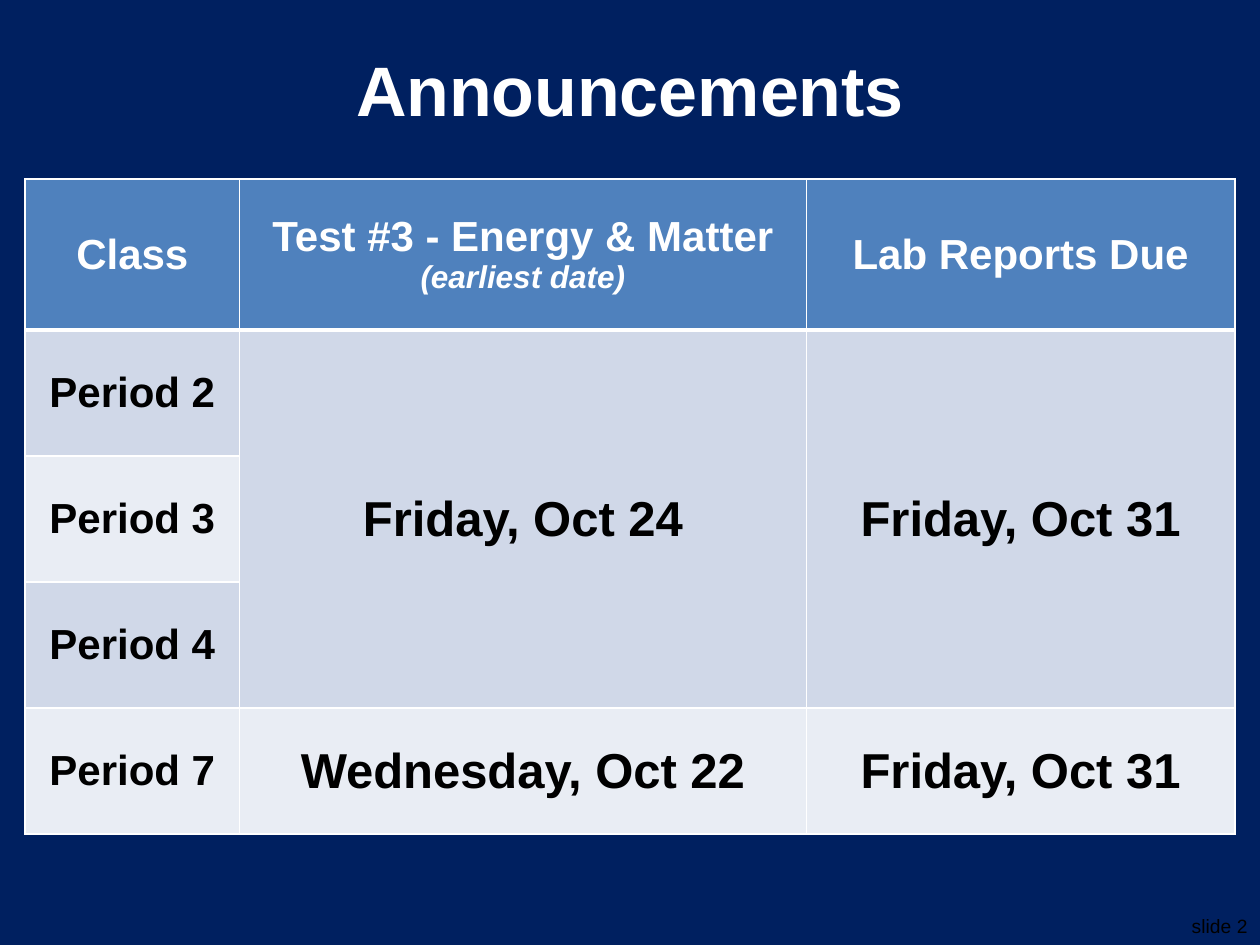
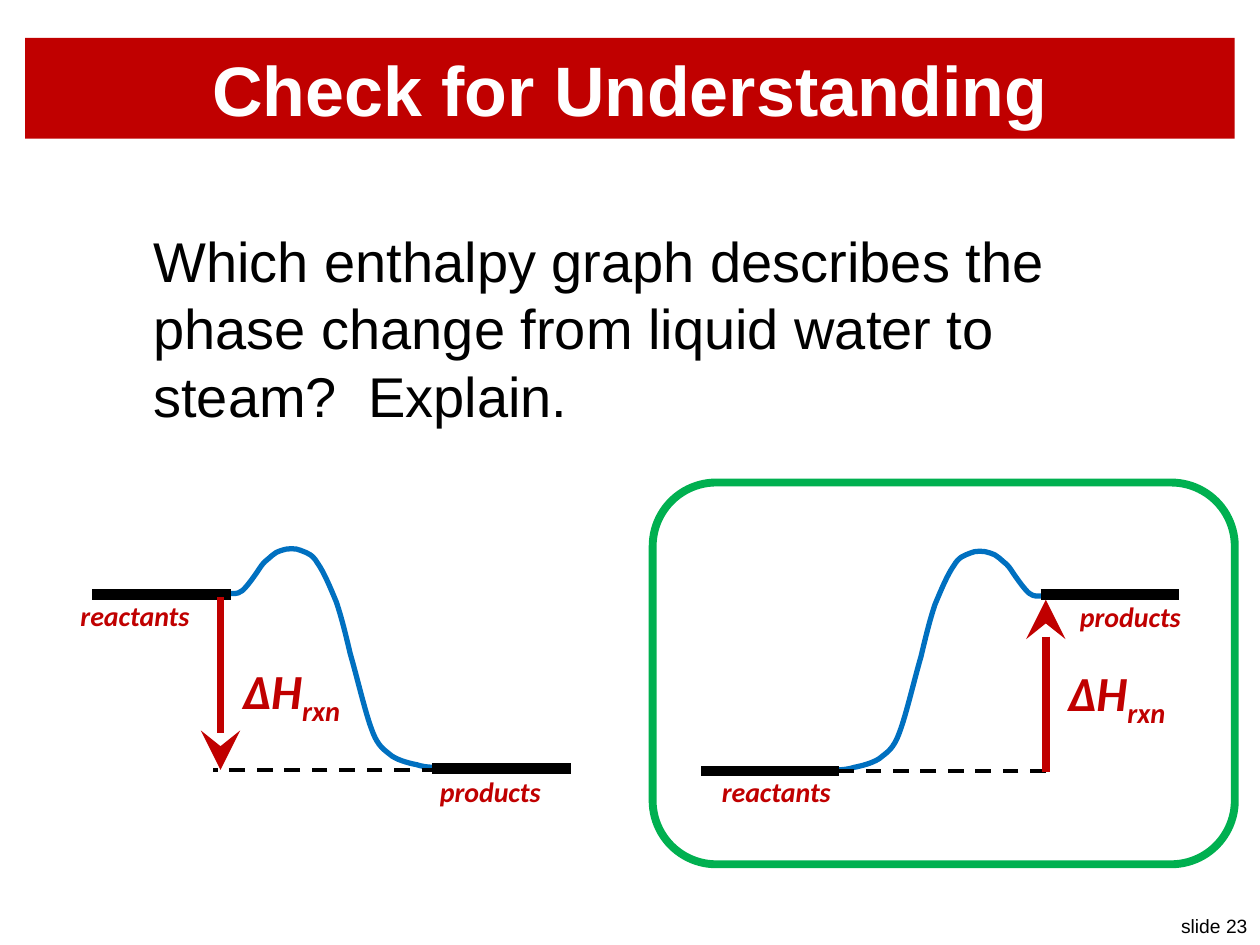
from lxml import etree
from pptx import Presentation
from pptx.dml.color import RGBColor
from pptx.enum.dml import MSO_LINE
from pptx.enum.shapes import MSO_CONNECTOR, MSO_SHAPE
from pptx.enum.text import MSO_ANCHOR, MSO_AUTO_SIZE, PP_ALIGN as AL
from pptx.oxml.ns import qn
from pptx.util import Inches, Pt

NAVY, WHITE, BLACK, RED = "002060", "FFFFFF", "000000", "C00000"
HEADER, BAND_DARK, BAND_LIGHT = "4F81BD", "D0D8E8", "E9EDF4"
CURVE_BLUE, ANSWER_GREEN = "0070C0", "00B050"

# Announcements: each cell is a list of (text, size, italic) lines
COLUMNS = [1.7, 4.5, 3.4]
ROWS = [1.2, 1, 1, 1, 1]
HEADINGS = [[("Class", 24, False)],
            [("Test #3 - Energy & Matter", 24, False), ("(earliest date)", 18, True)],
            [("Lab Reports Due", 24, False)]]
CLASSES = [("Period 2", "Friday, Oct 24", "Friday, Oct 31"),
           ("Period 3", None, None),
           ("Period 4", None, None),
           ("Period 7", "Wednesday, Oct 22", "Friday, Oct 31")]

# Check for Understanding
QUESTION = "Which enthalpy graph describes the phase change from liquid water to steam?  Explain."
# Energy curve from the high level to the low one: a start, then Bezier triples
CURVE = [(0, 0),
         (.03, 0), (.06, .01), (.1, -.02), (.13, -.04), (.2, -.14), (.2, -.14),
         (.23, -.18), (.25, -.22), (.28, -.25), (.32, -.28), (.36, -.33), (.41, -.34),
         (.46, -.36), (.53, -.36), (.57, -.34), (.62, -.32), (.66, -.31), (.7, -.24),
         (.75, -.17), (.8, -.05), (.85, .07), (.89, .19), (.92, .31), (.96, .48),
         (1.01, .65), (1.08, .95), (1.13, 1.08), (1.18, 1.22), (1.23, 1.24), (1.29, 1.29),
         (1.35, 1.33), (1.44, 1.35), (1.49, 1.36), (1.55, 1.38), (1.62, 1.38), (1.62, 1.38)]
GRAPHS = [
    dict(start=(8.27, 4.73), direction=-1, high_y=4.72, low_y=6.12,
         dash=(6.52, 8.3, 6.12), arrow=(8.3, 4.76, 6.13), head="headEnd",
         reactants=(5.63, 6.1), products=(8.45, 4.71), delta=(8.38, 5.21)),
    dict(start=(1.82, 4.71), direction=1, high_y=4.72, low_y=6.1,
         dash=(1.69, 3.47, 6.11), arrow=(1.75, 4.74, 6.11), head="tailEnd",
         reactants=(.54, 4.7), products=(3.37, 6.1), delta=(1.83, 5.19)),
]


def rgb(color):
    return RGBColor.from_string(color)


def add_run(p, text, size, color, font="Arial", bold=False, italic=False):
    r = p.add_run()
    r.text = text
    r.font.name, r.font.size = font, Pt(size)
    r.font.bold, r.font.italic = bold, italic
    r.font.color.rgb = rgb(color)
    return r


def add_text(shapes, box, align=AL.LEFT, wrap=False):
    """Add a text box and return its first paragraph."""
    tf = shapes.add_textbox(*map(Inches, box)).text_frame
    tf.word_wrap = wrap
    if not wrap:
        tf.auto_size = MSO_AUTO_SIZE.SHAPE_TO_FIT_TEXT
    tf.paragraphs[0].alignment = align
    return tf.paragraphs[0]


def add_line(shapes, x1, y1, x2, y2, color, width):
    line = shapes.add_connector(MSO_CONNECTOR.STRAIGHT, *map(Inches, (x1, y1, x2, y2)))
    line.line.color.rgb = rgb(color)
    line.line.width = Pt(width)
    etree.SubElement(line._element.spPr, qn("a:effectLst"))
    return line


def style_outline(sp, color, width):
    sp.shadow.inherit = False
    sp.fill.background()
    sp.line.color.rgb = rgb(color)
    sp.line.width = Pt(width)


def add_slide(prs, title, number, background, band=None):
    """Add a slide with the shared title and slide number."""
    s = prs.slides.add_slide(prs.slide_layouts[6])
    s.background.fill.solid()
    s.background.fill.fore_color.rgb = rgb(background)
    p = add_text(s.shapes, (9.25, 7.21, .75, .29), AL.RIGHT)
    add_run(p, f"slide {number}", 11, BLACK)

    sp = s.shapes.add_shape(MSO_SHAPE.RECTANGLE, *map(Inches, (.2, .3, 9.6, .8)))
    sp.shadow.inherit = False
    sp.line.fill.background()
    if band:
        sp.fill.solid()
        sp.fill.fore_color.rgb = rgb(band)
    else:
        sp.fill.background()
    tf = sp.text_frame
    tf.word_wrap = True
    tf.vertical_anchor = MSO_ANCHOR.MIDDLE
    tf.paragraphs[0].alignment = AL.CENTER
    add_run(tf.paragraphs[0], title, 40, WHITE, bold=True)
    return s


def set_borders(cell, **widths):
    tcPr = cell._tc.get_or_add_tcPr()
    for side in "LRTB":
        ln = etree.SubElement(tcPr, qn(f"a:ln{side}"), w=str(Pt(widths.get(side, 1))))
        fill = etree.SubElement(ln, qn("a:solidFill"))
        etree.SubElement(fill, qn("a:srgbClr"), val=WHITE)


def fill_cell(cell, lines, fill, color, **widths):
    set_borders(cell, **widths)
    cell.fill.solid()
    cell.fill.fore_color.rgb = rgb(fill)
    cell.vertical_anchor = MSO_ANCHOR.MIDDLE
    tf = cell.text_frame
    for i, (text, size, italic) in enumerate(lines):
        p = tf.add_paragraph() if i else tf.paragraphs[0]
        p.alignment = AL.CENTER
        add_run(p, text, size, color, bold=True, italic=italic)


def add_schedule(s):
    box = (.2, 1.42, sum(COLUMNS), sum(ROWS))
    table = s.shapes.add_table(len(ROWS), len(COLUMNS), *map(Inches, box)).table
    for column, width in zip(table.columns, COLUMNS):
        column.width = Inches(width)
    for row, height in zip(table.rows, ROWS):
        row.height = Inches(height)
    for c, lines in enumerate(HEADINGS):
        fill_cell(table.cell(0, c), lines, HEADER, WHITE, B=3)
    for r, values in enumerate(CLASSES, 1):
        band = BAND_DARK if r % 2 else BAND_LIGHT
        for c, value in enumerate(values):
            lines = [(value, 28 if c else 24, False)] if value else []
            fill_cell(table.cell(r, c), lines, band if value else BAND_DARK, BLACK,
                      T=3 if r == 1 else 1)
    for c in (1, 2):
        table.cell(1, c).merge(table.cell(3, c))


def add_curve(shapes, points):
    """Add a freeform whose points after the first are Bezier triples."""
    start, *rest = [(Inches(x), Inches(y)) for x, y in points]
    builder = shapes.build_freeform(*start)
    builder.add_line_segments(rest, close=False)
    sp = builder.convert_to_shape()
    segments = list(sp._element.iter(qn("a:lnTo")))
    for i in range(0, len(segments), 3):
        first, *others = segments[i:i + 3]
        first.tag = qn("a:cubicBezTo")
        for segment in others:
            first.append(segment[0])
            segment.getparent().remove(segment)
    style_outline(sp, CURVE_BLUE, 3)


def add_graph(s, g):
    shapes = s.shapes.add_group_shape().shapes
    (x0, y0), way = g["start"], g["direction"]
    add_curve(shapes, [(x0 + way * x, y0 + y) for x, y in CURVE])

    for y, near, far in ((g["high_y"], .01, -1.09), (g["low_y"], 1.61, 2.71)):
        add_line(shapes, x0 + way * near, y, x0 + way * far, y, BLACK, 6)
    left, right, y = g["dash"]
    add_line(shapes, right, y, left, y, BLACK, 2.25).line.dash_style = MSO_LINE.DASH
    x, top, bottom = g["arrow"]
    arrow = add_line(shapes, x, top, x, bottom, RED, 4.5)
    etree.SubElement(arrow.line._get_or_add_ln(), qn(f"a:{g['head']}"),
                     type="stealth", w="lg", len="lg")

    for name, width, align in (("reactants", 1.08, AL.LEFT), ("products", 1.02, AL.RIGHT)):
        p = add_text(shapes, (*g[name], width, .37), align)
        add_run(p, name, 16, RED, "Calibri", True, True)
    p = add_text(shapes, (*g["delta"], 1.03, .57))
    add_run(p, "ΔH", 28, RED, "Calibri", True, True)
    r = add_run(p, "rxn", 28, RED, "Calibri", True, True)
    r.font._element.set("baseline", "-25000")


def add_question(s):
    p = add_text(s.shapes, (1.12, 1.75, 7.76, 1.84), wrap=True)
    p.space_before = Pt(12)
    add_run(p, QUESTION, 32, BLACK)


def add_answer_frame(s):
    sp = s.shapes.add_shape(MSO_SHAPE.ROUNDED_RECTANGLE, *map(Inches, (5.18, 3.83, 4.62, 3.03)))
    style_outline(sp, ANSWER_GREEN, 4.5)


def main():
    prs = Presentation()
    prs.slide_width, prs.slide_height = Inches(10), Inches(7.5)

    add_schedule(add_slide(prs, "Announcements", 2, NAVY))

    s = add_slide(prs, "Check for Understanding", 23, WHITE, RED)
    add_question(s)
    for g in GRAPHS:
        add_graph(s, g)
    add_answer_frame(s)
    prs.save("out.pptx")


if __name__ == "__main__":
    main()
